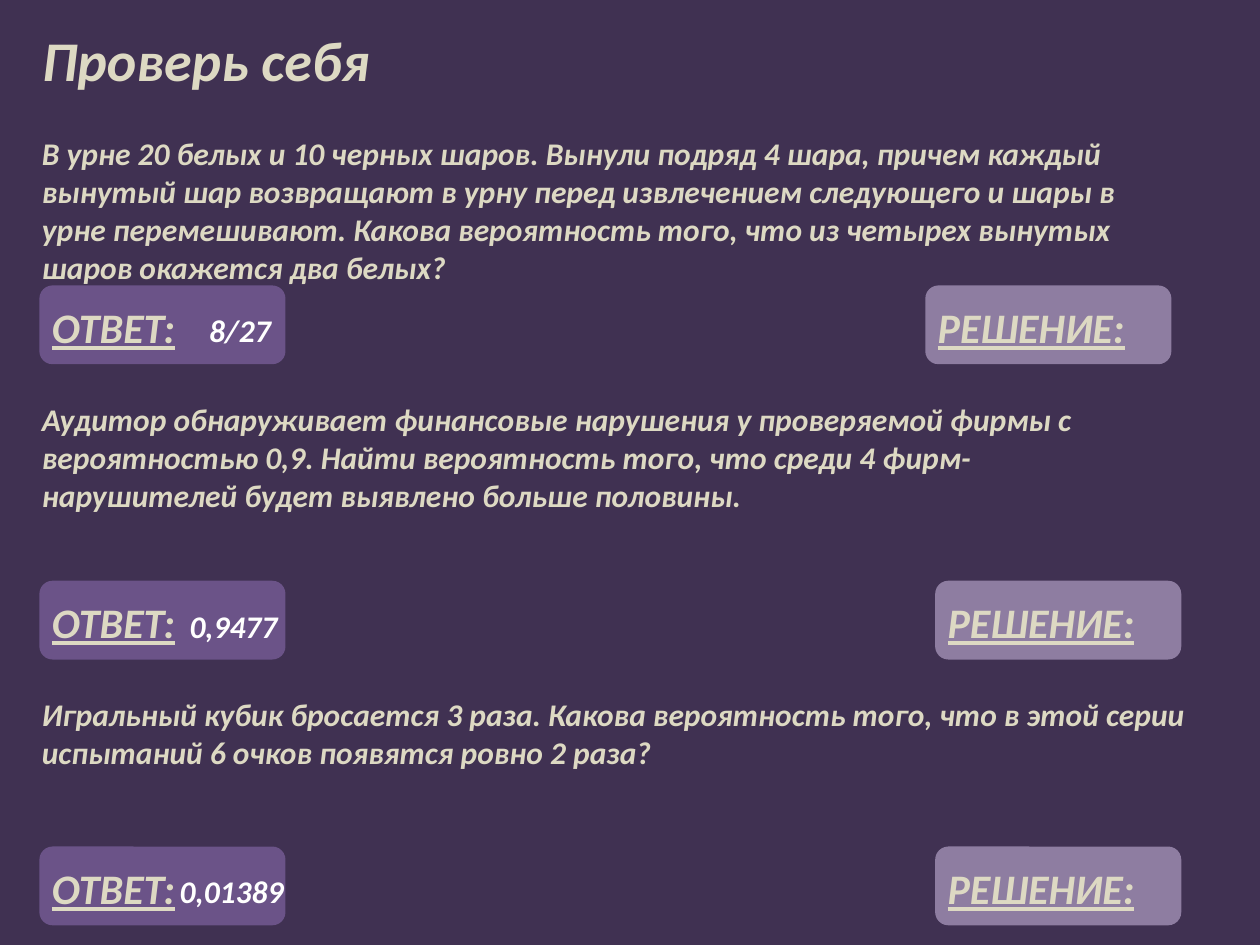
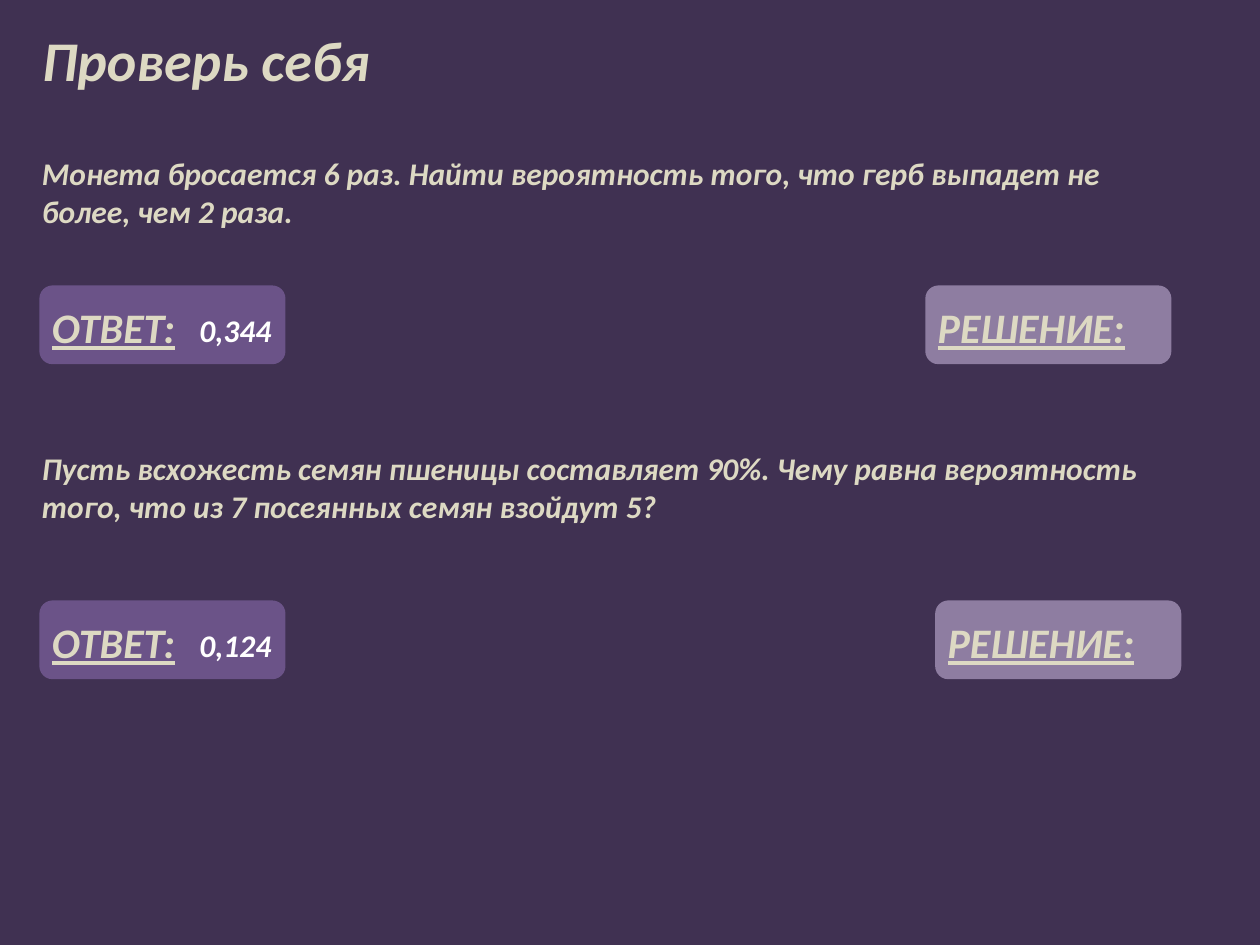
from collections import namedtuple

from lxml.etree import SubElement
from pptx import Presentation
from pptx.dml.color import RGBColor
from pptx.enum.shapes import MSO_SHAPE
from pptx.enum.text import MSO_ANCHOR, MSO_AUTO_SIZE, PP_ALIGN
from pptx.oxml.ns import qn
from pptx.util import Inches, Pt

COLUMNS = 128
UNIT = Inches(10) / COLUMNS
FONT = "Calibri"
NIGHT, SAND, WHITE = "403152", "DDD9C3", "FFFFFF"
ANSWER_FILL, SOLUTION_FILL = "8064A2", "B3A2C7"
CARD_OPACITY = 68
TEXT_COLUMN, ANSWER_COLUMN = 3, 4
CARD_WIDTH, CARD_HEIGHT = 25, 8

Problem = namedtuple(
    "Problem",
    "text row width height card_row solution_column answer answer_column answer_width",
)

SLIDES = [
    [
        Problem(
            "В урне 20 белых и 10 черных шаров. Вынули подряд 4 шара, причем каждый "
            "вынутый шар возвращают в урну перед извлечением следующего и шары в урне "
            "перемешивают. Какова вероятность того, что из четырех вынутых шаров "
            "окажется два белых?",
            13, 117, 17, 29, 94, "8/27", 20, 9,
        ),
        Problem(
            "Аудитор обнаруживает финансовые нарушения у проверяемой фирмы с "
            "вероятностью 0,9. Найти вероятность того, что среди 4 фирм-нарушителей "
            "будет выявлено больше половины.",
            40, 116, 13, 59, 95, "0,9477", 18, 11.6,
        ),
        Problem(
            "Игральный кубик бросается 3 раза. Какова вероятность того, что в этой "
            "серии испытаний 6 очков появятся ровно 2 раза?",
            70, 122, 9, 86, 95, "0,01389", 17, 13.2,
        ),
    ],
    [
        Problem(
            "Монета бросается 6 раз. Найти вероятность того, что герб выпадет не "
            "более, чем 2 раза.",
            15, 117, 9, 29, 94, "0,344", 19, 10,
        ),
        Problem(
            "Пусть всхожесть семян пшеницы составляет 90%. Чему равна вероятность "
            "того, что из 7 посеянных семян взойдут 5?",
            45, 116, 9, 61, 95, "0,124", 19, 10,
        ),
    ],
]


def color(value):
    return RGBColor.from_string(value)


def grid(*cells):
    return [round(cell * UNIT) for cell in cells]


def write(box, text, size, ink=SAND, wrap=True, **extra):
    frame = box.text_frame
    frame_format = {
        "word_wrap": wrap,
        "auto_size": MSO_AUTO_SIZE.SHAPE_TO_FIT_TEXT,
        "vertical_anchor": MSO_ANCHOR.TOP,
    }
    for name, value in frame_format.items():
        setattr(frame, name, value)
    para = frame.paragraphs[0]
    para.alignment = PP_ALIGN.LEFT
    span = para.add_run()
    span.text = text
    span_format = {"name": FONT, "size": Pt(size), "bold": True, "italic": True, **extra}
    for name, value in span_format.items():
        setattr(span.font, name, value)
    span.font.color.rgb = color(ink)


def add_title(page, text):
    title = page.shapes.title
    places = zip(("left", "top", "width", "height"), grid(TEXT_COLUMN, 2, 38, 8.2))
    for name, value in places:
        setattr(title, name, value)
    write(title, text, 32)


def add_text(page, place, text, size, **options):
    write(page.shapes.add_textbox(*grid(*place)), text, size, **options)


def add_card(page, column, row, fill, label):
    card = page.shapes.add_shape(
        MSO_SHAPE.ROUNDED_RECTANGLE, *grid(column, row, CARD_WIDTH, CARD_HEIGHT)
    )
    card.shadow.inherit = False
    card.line.fill.background()
    card.fill.solid()
    card.fill.fore_color.rgb = color(fill)
    tint = next(card.element.spPr.iter(qn("a:srgbClr")))
    SubElement(tint, qn("a:alpha"), val=str(CARD_OPACITY * 1000))
    add_text(page, (column, row + 1, CARD_WIDTH + 1, 6.5), label, 24, underline=True)


def add_problem(page, problem):
    row = problem.card_row
    add_text(
        page, (TEXT_COLUMN, problem.row, problem.width, problem.height), problem.text, 18
    )
    add_card(page, ANSWER_COLUMN, row, ANSWER_FILL, "ОТВЕТ:")
    add_card(page, problem.solution_column, row, SOLUTION_FILL, "РЕШЕНИЕ:")
    answer_place = (problem.answer_column, row + 2, problem.answer_width, 5.2)
    add_text(page, answer_place, problem.answer, 18, ink=WHITE, wrap=False)


def main():
    deck = Presentation()
    deck.slide_width, deck.slide_height = Inches(10), Inches(7.5)
    background = deck.slide_master.background.fill
    background.solid()
    background.fore_color.rgb = color(NIGHT)
    for problems in SLIDES:
        page = deck.slides.add_slide(deck.slide_layouts.get_by_name("Title Only"))
        add_title(page, "Проверь себя")
        for problem in problems:
            add_problem(page, problem)
    deck.save("out.pptx")


if __name__ == "__main__":
    main()
